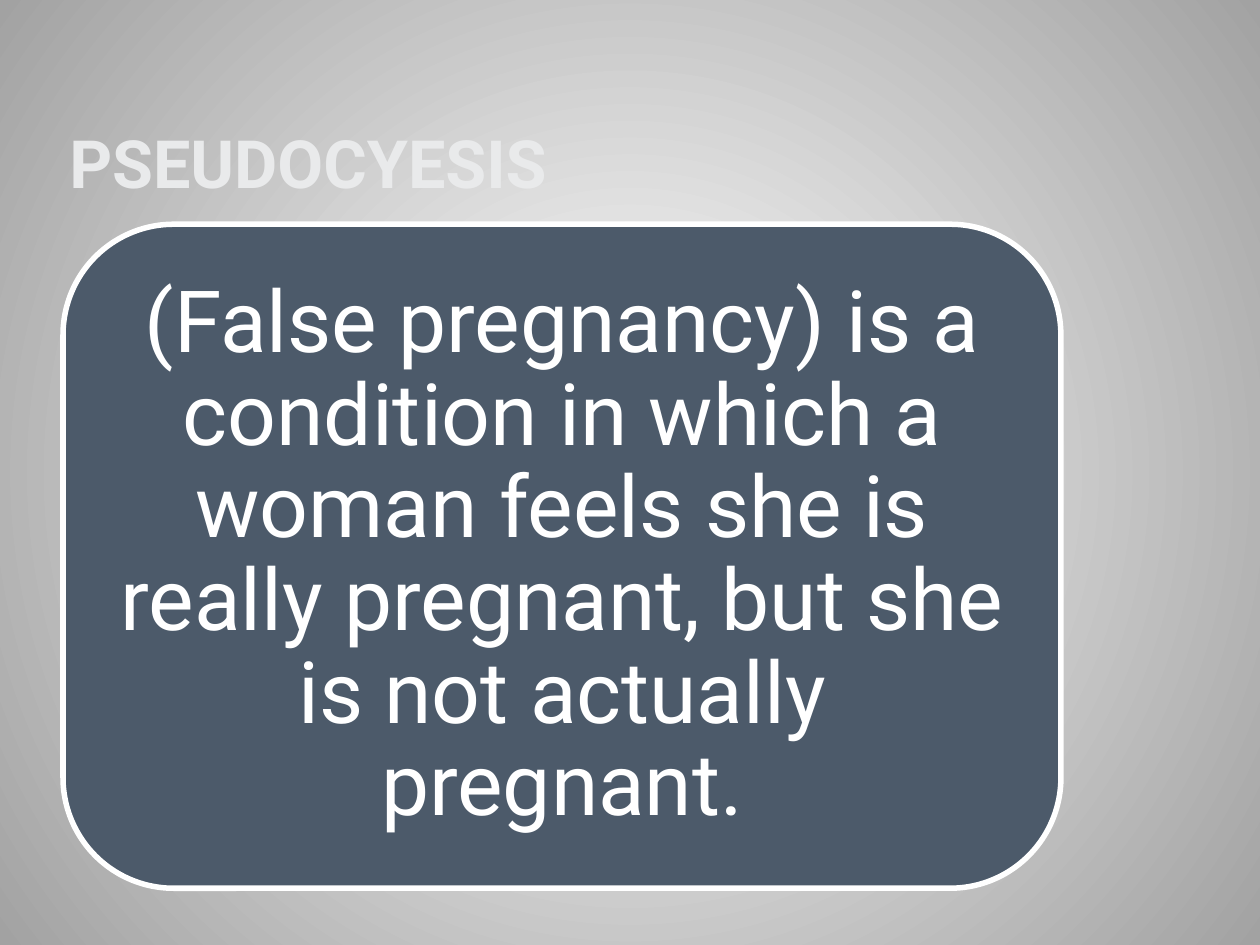
import pptx
import pptx.dml.color
import pptx.enum.shapes
import pptx.enum.text
import pptx.oxml
import pptx.oxml.ns
import pptx.util
from pptx.util import Inches

WHITE = pptx.dml.color.RGBColor(0xFF, 0xFF, 0xFF)
GREY = pptx.dml.color.RGBColor(0xA2, 0xA2, 0xA2)
PALE = pptx.dml.color.RGBColor(0xE9, 0xEA, 0xEB)
SLATE = pptx.dml.color.RGBColor(0x4C, 0x5A, 0x6A)
FONT = "Roboto"
LEFT = Inches(0.5)
WIDTH = Inches(7.92)


def paint_background(page):
    fill = page.background.fill
    fill.gradient()
    for stop, color in zip(fill.gradient_stops, (WHITE, GREY)):
        stop.color.rgb = color
    gradient = page.element.find(".//" + pptx.oxml.ns.qn("a:gradFill"))
    gradient.remove(gradient.find(pptx.oxml.ns.qn("a:lin")))
    gradient.append(pptx.oxml.parse_xml(
        f'<a:path {pptx.oxml.ns.nsdecls("a")} path="circle">'
        '<a:fillToRect l="50000" t="50000" r="50000" b="50000"/></a:path>'))


def write_text(box, text, *, size, color, anchor, align, insets, bold=False, spacing=1.0):
    frame = box.text_frame
    frame.word_wrap = True
    frame.auto_size = pptx.enum.text.MSO_AUTO_SIZE.NONE
    frame.vertical_anchor = anchor
    frame.margin_left = frame.margin_right = Inches(insets[0])
    frame.margin_top = frame.margin_bottom = Inches(insets[1])
    para = frame.paragraphs[0]
    para.alignment = align
    para.line_spacing = spacing
    span = para.add_run()
    span.text = text
    span.font.name = FONT
    span.font.size = pptx.util.Pt(size)
    span.font.bold = bold
    span.font.color.rgb = color


def place_title(page, text):
    title = page.shapes.title
    title.left, title.top, title.width, title.height = LEFT, Inches(0.35), WIDTH, Inches(1.25)
    write_text(title, text, size=38, color=PALE, bold=True, insets=(0.05, 0),
               anchor=pptx.enum.text.MSO_ANCHOR.BOTTOM, align=pptx.enum.text.PP_ALIGN.LEFT)


def add_definition(page, text):
    card = page.shapes.add_shape(pptx.enum.shapes.MSO_SHAPE.ROUNDED_RECTANGLE,
                                 LEFT, Inches(1.78), WIDTH, Inches(5.27))
    card.shadow.inherit = False
    card.fill.solid()
    card.fill.fore_color.rgb = SLATE
    card.line.color.rgb = WHITE
    card.line.width = pptx.util.Pt(3.15)
    write_text(card, text, size=49, color=WHITE, spacing=0.9, insets=(0.2, 0.2),
               anchor=pptx.enum.text.MSO_ANCHOR.MIDDLE, align=pptx.enum.text.PP_ALIGN.CENTER)


def main():
    deck = pptx.Presentation()
    deck.slide_width, deck.slide_height = Inches(10), Inches(7.5)
    page = deck.slides.add_slide(deck.slide_layouts.get_by_name("Title Only"))
    paint_background(page)
    place_title(page, "PSEUDOCYESIS")
    add_definition(page, "(False pregnancy) is a condition in which a woman feels she is "
                         "really pregnant, but she is not actually pregnant.")
    deck.save("out.pptx")


if __name__ == "__main__":
    main()
